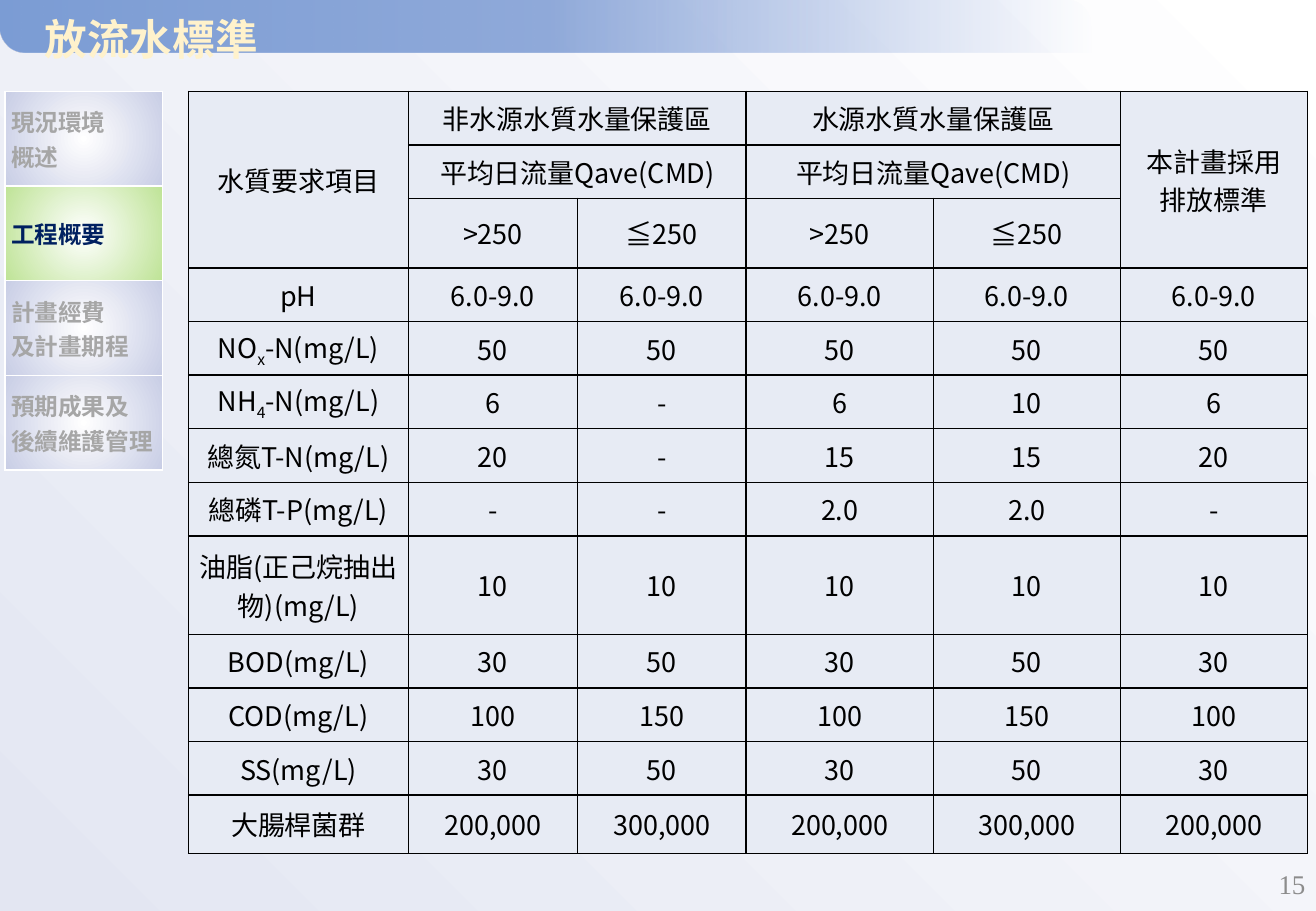
import pptx
import pptx.dml.color
import pptx.enum.shapes
import pptx.enum.text
import pptx.oxml
import pptx.oxml.ns
import pptx.util

Cm = pptx.util.Cm
Pt = pptx.util.Pt
Align = pptx.enum.text.PP_ALIGN
Anchor = pptx.enum.text.MSO_ANCHOR
qn = pptx.oxml.ns.qn
NS = pptx.oxml.ns.nsdecls("a")


def color(code):
    return pptx.dml.color.RGBColor.from_string(code)


def apply(target, values):
    for name, value in values.items():
        setattr(target, name, value)


class Deck:
    face = "Noto Sans CJK SC"

    def __init__(self, width, height):
        self.prs = pptx.Presentation()
        apply(self.prs, {"slide_width": Cm(width), "slide_height": Cm(height)})
        self.slide = self.prs.slides.add_slide(self.prs.slide_layouts[6])

    def blend(self, fill, root, stops, angle=None):
        """Fill with stops of (percent, colour, alpha); round if no angle."""
        fill.gradient()
        marks = "".join(
            f'<a:gs pos="{pos * 1000}"><a:srgbClr val="{code}">'
            f'<a:alpha val="{alpha * 1000}"/></a:srgbClr></a:gs>'
            for pos, code, alpha in stops)
        if angle is None:
            way = ('<a:path path="circle"><a:fillToRect l="50000" t="50000" '
                   'r="50000" b="50000"/></a:path>')
        else:
            way = f'<a:lin ang="{angle * 60000}" scaled="0"/>'
        old = root.find(".//" + qn("a:gradFill"))
        old.getparent().replace(old, pptx.oxml.parse_xml(
            f'<a:gradFill {NS} rotWithShape="1"><a:gsLst>{marks}</a:gsLst>{way}</a:gradFill>'))

    def back(self, stops, angle):
        self.blend(self.slide.background.fill, self.slide.element, stops, angle)

    def bar(self, box, stops, angle):
        kind = pptx.enum.shapes.MSO_SHAPE.ROUND_2_DIAG_RECTANGLE
        bar = self.slide.shapes.add_shape(kind, *map(Cm, box))
        bar.adjustments[0], bar.adjustments[1] = 0, 0.5
        bar.shadow.inherit = False
        bar.line.fill.background()
        self.blend(bar.fill, bar.element, stops, angle)

    def lines(self, frame, text, size, ink, bold=False, face=None, **layout):
        """Lines split at a newline; _x_ marks a subscript."""
        face = face or self.face
        frame.word_wrap = True
        for i, line in enumerate(text.split("\n")):
            par = frame.paragraphs[0] if i == 0 else frame.add_paragraph()
            apply(par, layout)
            for j, part in enumerate(line.split("_")):
                run = par.add_run()
                run.text = part
                apply(run.font, {"size": Pt(size), "bold": bold, "name": face})
                run.font.color.rgb = color(ink)
                props = run._r.get_or_add_rPr()
                props.append(pptx.oxml.parse_xml(f'<a:ea {NS} typeface="{face}"/>'))
                if j % 2:
                    props.set("baseline", "-25000")

    def text(self, box, text, size, ink, **style):
        frame = self.slide.shapes.add_textbox(*map(Cm, box)).text_frame
        frame.vertical_anchor = Anchor.MIDDLE
        self.lines(frame, text, size, ink, **style)

    def grid(self, left, top, cols, rows):
        table = self.slide.shapes.add_table(
            len(rows), len(cols), Cm(left), Cm(top),
            Cm(sum(cols)), Cm(sum(rows))).table
        apply(table, {"first_row": False, "horz_banding": False})
        for col, width in zip(table.columns, cols):
            col.width = Cm(width)
        for row, height in zip(table.rows, rows):
            row.height = Cm(height)
        return table

    def cell(self, cell, pad, edge):
        sides = ("left", "right", "top", "bottom")
        apply(cell, {f"margin_{side}": Cm(pad) for side in sides})
        cell.vertical_anchor = Anchor.MIDDLE
        props = cell._tc.get_or_add_tcPr()
        for side in "LRTB":
            props.append(pptx.oxml.parse_xml(
                f'<a:ln{side} {NS} w="12700"><a:solidFill><a:srgbClr val="{edge}"/>'
                f'</a:solidFill></a:ln{side}>'))

    def menu(self, items, active):
        table = self.grid(0.1, 1.91, [3.3], [1.98] * len(items))
        for i, item in enumerate(items):
            cell = table.cell(i, 0)
            tint, ink = ("BEE396", "002060") if i == active else ("C8CDE5", "A6A6A6")
            self.cell(cell, 0.13, "FFFFFF")
            self.blend(cell.fill, cell._tc, [(0, "FFFFFF", 100), (100, tint, 100)])
            self.lines(cell.text_frame, item, 14, ink, bold=True,
                       alignment=Align.JUSTIFY)

    def data(self, rows, cols, heights, spans):
        table = self.grid(3.94, 1.91, cols, heights)
        for r, row in enumerate(rows):
            for c, value in enumerate(row):
                cell = table.cell(r, c)
                self.cell(cell, 0.05, "000000")
                cell.fill.solid()
                cell.fill.fore_color.rgb = color("E7EBF4")
                if value:
                    self.lines(cell.text_frame, value, 16, "000000",
                               alignment=Align.CENTER)
        for r, c, r2, c2 in spans:
            table.cell(r, c).merge(table.cell(r2, c2))


def main():
    deck = Deck(27.51, 19.05)

    # Backdrop and heading
    deck.back([(0, "FFFFFF", 100), (100, "E3E6F2", 100)], 135)
    deck.bar((0, 0, 22.81, 1.09),
             [(0, "9DB5E3", 0), (50, "90AADA", 100), (100, "7C9DD5", 100)], 180)
    deck.text((0.69, 0.33, 23.72, 1.09), "放流水標準", 25.2, "FFF2CC",
              bold=True, line_spacing=0.9)
    deck.text((21.34, 17.98, 6.2, 1.02), "15", 16, "8C8C8C",
              face="Times New Roman", alignment=Align.RIGHT)

    # Chapter menu
    deck.menu(["現況環境\n概述", "工程概要", "計畫經費\n及計畫期程",
               "預期成果及\n後續維護管理"], active=1)

    # Effluent limits
    flow = "平均日流量Qave(CMD)"
    head = [
        ["水質要求項目", "非水源水質水量保護區", "", "水源水質水量保護區", "",
         "本計畫採用\n排放標準"],
        ["", flow, "", flow, "", ""],
        ["", ">250", "≦250", ">250", "≦250", ""],
    ]
    limits = [
        ("pH", *["6.0-9.0"] * 5),
        ("NO_x_-N(mg/L)", *["50"] * 5),
        ("NH_4_-N(mg/L)", "6", "-", "6", "10", "6"),
        ("總氮T-N(mg/L)", "20", "-", "15", "15", "20"),
        ("總磷T-P(mg/L)", "-", "-", "2.0", "2.0", "-"),
        ("油脂(正己烷抽出物)(mg/L)", *["10"] * 5),
        ("BOD(mg/L)", "30", "50", "30", "50", "30"),
        ("COD(mg/L)", "100", "150", "100", "150", "100"),
        ("SS(mg/L)", "30", "50", "30", "50", "30"),
        ("大腸桿菌群", "200,000", "300,000", "200,000", "300,000", "200,000"),
    ]
    spans = [(0, 0, 2, 0), (0, 5, 2, 5)]
    spans += [(r, c, r, c + 1) for r in (0, 1) for c in (1, 3)]
    deck.data(head + limits, [4.6] + [3.53] * 2 + [3.91] * 3,
              [1.12] * 8 + [2.06] + [1.12] * 3 + [1.22], spans)

    deck.prs.save("out.pptx")


if __name__ == "__main__":
    main()
